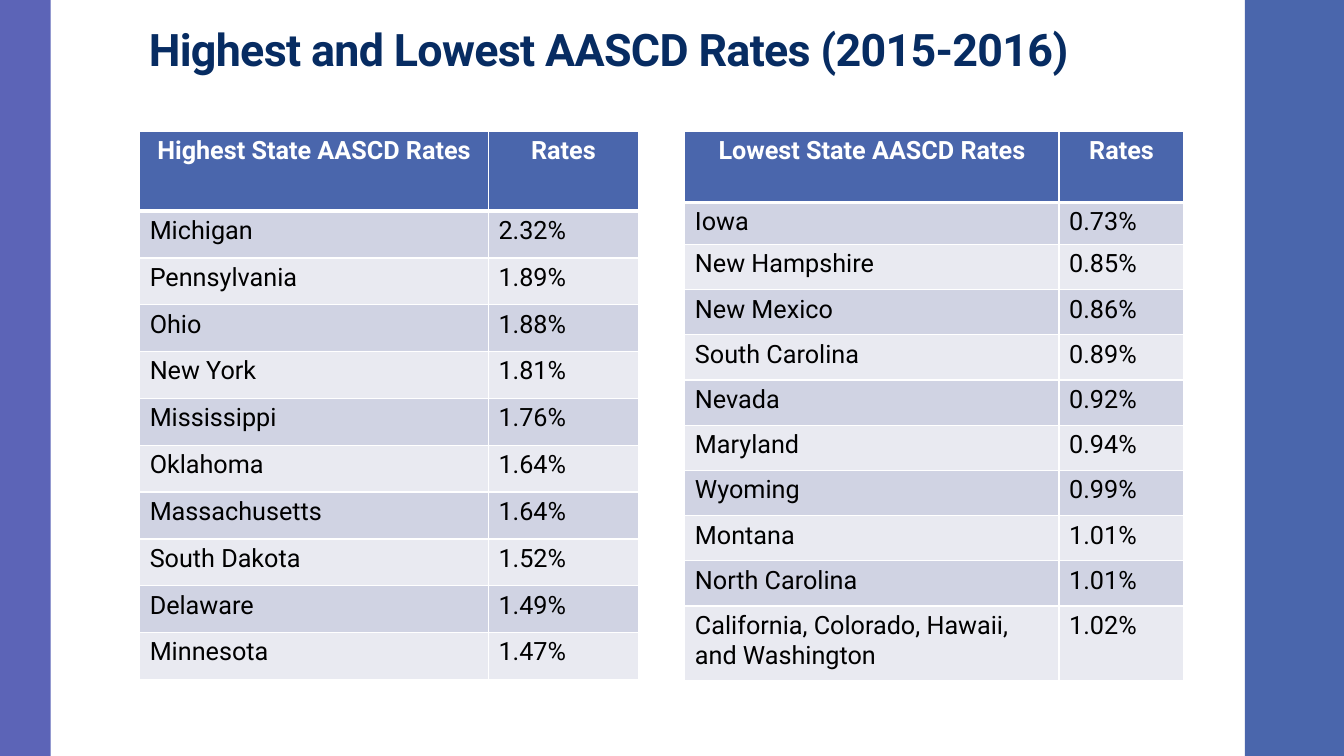
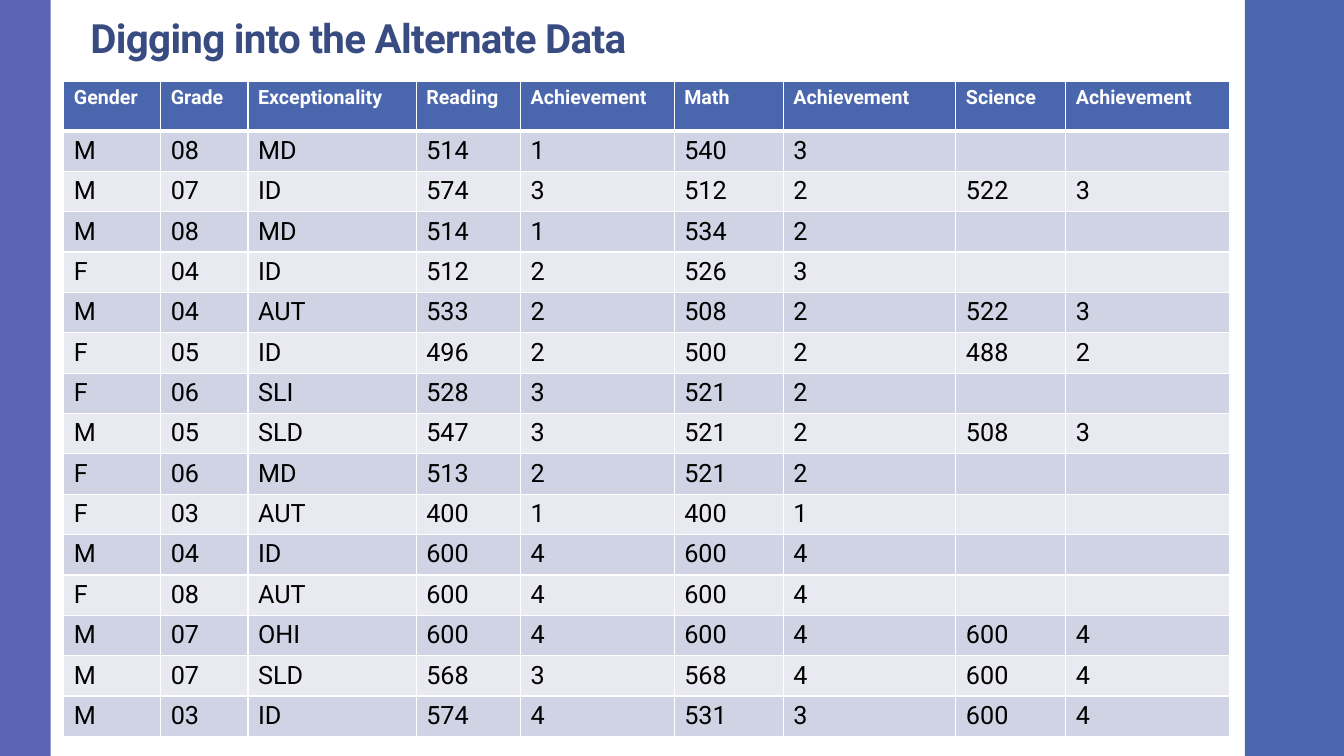
from lxml.etree import SubElement
from pptx import Presentation
from pptx.dml.color import RGBColor
from pptx.enum.shapes import MSO_SHAPE
from pptx.enum.text import MSO_ANCHOR, PP_ALIGN
from pptx.oxml.ns import qn
from pptx.util import Cm, Pt

COLORS = {
    "blue": "4A66AC",
    "violet": "5C64B7",
    "navy": "072C62",
    "slate": "384C81",
    "dark_row": "D0D3E3",
    "light_row": "E9EAF1",
    "white": "FFFFFF",
    "black": "000000",
}
FONT = "Roboto"
SLIDE_WIDTH, SLIDE_HEIGHT = 33.87, 19.05
BANDS = [(31.37, 2.5, "blue"), (0, 1.28, "violet")]
TITLE_FRAME = {
    "word_wrap": True,
    "vertical_anchor": MSO_ANCHOR.BOTTOM,
    "margin_left": Cm(0.25),
    "margin_right": Cm(0.25),
    "margin_top": Cm(0.08),
    "margin_bottom": Cm(0.13),
}

HIGHEST_RATES = [
    ("Highest State AASCD Rates", "Rates"),
    ("Michigan", "2.32%"),
    ("Pennsylvania", "1.89%"),
    ("Ohio", "1.88%"),
    ("New York", "1.81%"),
    ("Mississippi", "1.76%"),
    ("Oklahoma", "1.64%"),
    ("Massachusetts", "1.64%"),
    ("South Dakota", "1.52%"),
    ("Delaware", "1.49%"),
    ("Minnesota", "1.47%"),
]
LOWEST_RATES = [
    ("Lowest State AASCD Rates", "Rates"),
    ("Iowa", "0.73%"),
    ("New Hampshire", "0.85%"),
    ("New Mexico", "0.86%"),
    ("South Carolina", "0.89%"),
    ("Nevada", "0.92%"),
    ("Maryland", "0.94%"),
    ("Wyoming", "0.99%"),
    ("Montana", "1.01%"),
    ("North Carolina", "1.01%"),
    ("California, Colorado, Hawaii, and Washington", "1.02%"),
]
STUDENT_SCORES = [
    ("Gender", "Grade", "Exceptionality", "Reading", "Achievement",
     "Math", "Achievement", "Science", "Achievement"),
    ("M", "08", "MD", "514", "1", "540", "3", "", ""),
    ("M", "07", "ID", "574", "3", "512", "2", "522", "3"),
    ("M", "08", "MD", "514", "1", "534", "2", "", ""),
    ("F", "04", "ID", "512", "2", "526", "3", "", ""),
    ("M", "04", "AUT", "533", "2", "508", "2", "522", "3"),
    ("F", "05", "ID", "496", "2", "500", "2", "488", "2"),
    ("F", "06", "SLI", "528", "3", "521", "2", "", ""),
    ("M", "05", "SLD", "547", "3", "521", "2", "508", "3"),
    ("F", "06", "MD", "513", "2", "521", "2", "", ""),
    ("F", "03", "AUT", "400", "1", "400", "1", "", ""),
    ("M", "04", "ID", "600", "4", "600", "4", "", ""),
    ("F", "08", "AUT", "600", "4", "600", "4", "", ""),
    ("M", "07", "OHI", "600", "4", "600", "4", "600", "4"),
    ("M", "07", "SLD", "568", "3", "568", "4", "600", "4"),
    ("M", "03", "ID", "574", "4", "531", "3", "600", "4"),
]

SLIDES = [
    {
        "title": "Highest and Lowest AASCD Rates (2015-2016)",
        "title_box": (3.5, 0.81, 26.92, 1.25),
        "title_size": 32,
        "title_color": "navy",
        "header_size": 18,
        "header_align": PP_ALIGN.CENTER,
        "tables": [
            {"rows": HIGHEST_RATES, "left": 3.52, "top": 3.3,
             "widths": [8.79, 3.78],
             "heights": [2.02] + [1.18] * 10},
            {"rows": LOWEST_RATES, "left": 17.26, "top": 3.3,
             "widths": [9.43, 3.15],
             "heights": [1.8, 1.06] + [1.14] * 8 + [1.89]},
        ],
    },
    {
        "title": "Digging into the Alternate Data",
        "title_box": (2.03, 0.28, 28.4, 1.42),
        "title_size": 28.8,
        "title_color": "slate",
        "header_size": 14,
        "header_align": PP_ALIGN.LEFT,
        "tables": [
            {"rows": STUDENT_SCORES, "left": 1.61, "top": 2.04,
             "widths": [2.44, 2.2, 4.24, 2.63, 3.87, 2.75, 4.35, 2.77, 4.13],
             "heights": [1.26] + [1] * 15},
        ],
    },
]


def format_run(run, size, color, bold):
    settings = {"name": FONT, "size": Pt(size), "bold": bold}
    for name, value in settings.items():
        setattr(run.font, name, value)
    run.font.color.rgb = RGBColor.from_string(COLORS[color])


def add_borders(cell, row_index):
    """Draw white cell borders, with a thick rule between header and body."""
    points = {
        "L": 1,
        "R": 1,
        "T": 3 if row_index == 1 else 1,
        "B": 3 if row_index == 0 else 1,
    }
    properties = cell._tc.get_or_add_tcPr()
    for side, width in points.items():
        line = SubElement(properties, qn(f"a:ln{side}"), w=str(Pt(width)))
        fill = SubElement(line, qn("a:solidFill"))
        SubElement(fill, qn("a:srgbClr"), val=COLORS["white"])


presentation = Presentation()
presentation.slide_width = Cm(SLIDE_WIDTH)
presentation.slide_height = Cm(SLIDE_HEIGHT)
blank_layout = presentation.slide_layouts[6]

for content in SLIDES:
    slide = presentation.slides.add_slide(blank_layout)

    for left, width, color in BANDS:
        band = slide.shapes.add_shape(
            MSO_SHAPE.RECTANGLE, Cm(left), Cm(0), Cm(width), Cm(SLIDE_HEIGHT))
        band.shadow.inherit = False
        band.fill.solid()
        band.fill.fore_color.rgb = RGBColor.from_string(COLORS[color])
        band.line.fill.background()

    title_box = slide.shapes.add_textbox(*map(Cm, content["title_box"]))
    for name, value in TITLE_FRAME.items():
        setattr(title_box.text_frame, name, value)
    paragraph = title_box.text_frame.paragraphs[0]
    paragraph.line_spacing = 0.9
    run = paragraph.add_run()
    run.text = content["title"]
    format_run(run, content["title_size"], content["title_color"], True)
    run._r.get_or_add_rPr().set("spc", "-50")

    for layout in content["tables"]:
        rows, widths, heights = layout["rows"], layout["widths"], layout["heights"]
        table = slide.shapes.add_table(
            len(rows), len(widths), Cm(layout["left"]), Cm(layout["top"]),
            Cm(sum(widths)), Cm(sum(heights))).table
        for column, width in zip(table.columns, widths):
            column.width = Cm(width)

        for row_index, values in enumerate(rows):
            table.rows[row_index].height = Cm(heights[row_index])
            is_header = row_index == 0
            if is_header:
                fill_color = "blue"
            else:
                fill_color = "dark_row" if row_index % 2 else "light_row"

            for column_index, value in enumerate(values):
                cell = table.cell(row_index, column_index)
                add_borders(cell, row_index)
                cell.fill.solid()
                cell.fill.fore_color.rgb = RGBColor.from_string(COLORS[fill_color])
                if not value:
                    continue
                paragraph = cell.text_frame.paragraphs[0]
                run = paragraph.add_run()
                run.text = value
                if is_header:
                    paragraph.alignment = content["header_align"]
                    format_run(run, content["header_size"], "white", True)
                else:
                    format_run(run, 18, "black", False)

presentation.save("out.pptx")
